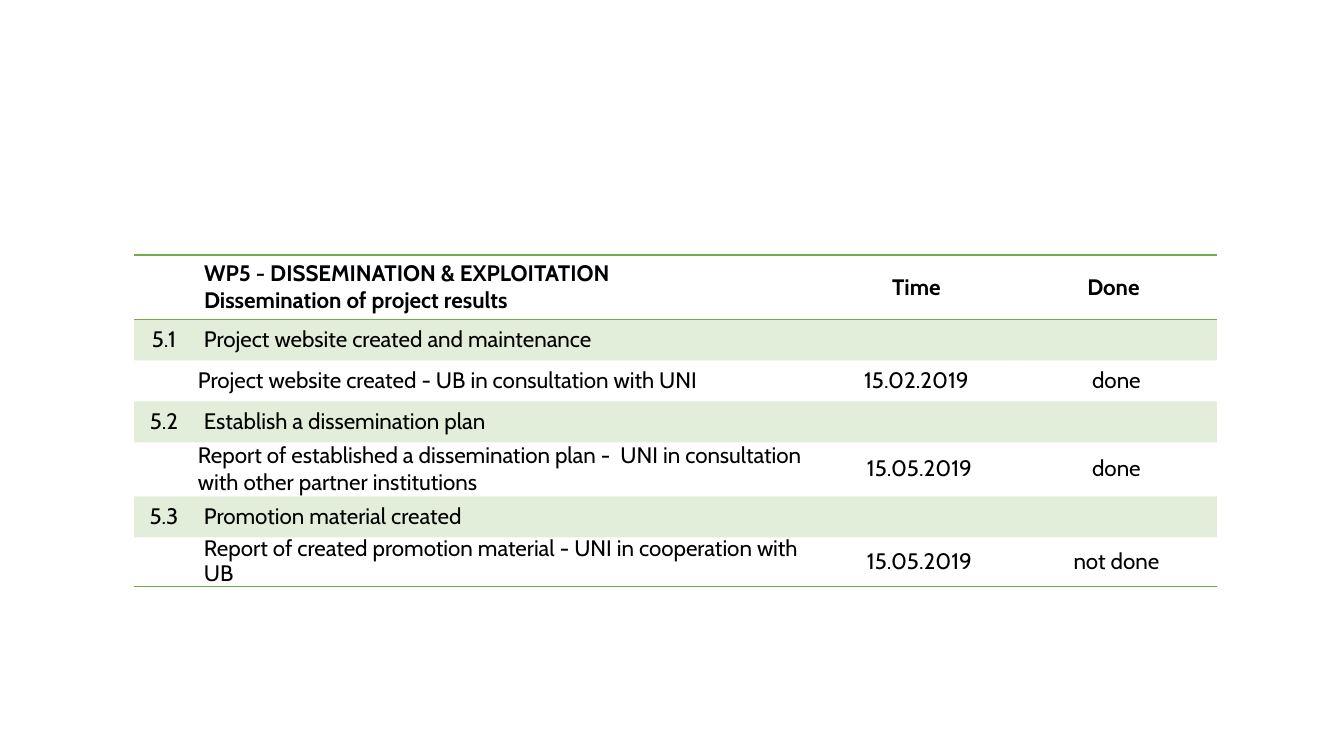
import pptx
import pptx.dml.color
import pptx.enum.text
import pptx.oxml
import pptx.oxml.ns
import pptx.util

PX = 914400 / 100.8
GREEN = "70AD47"
NO_STYLE = "{2D5ABB26-0587-4C30-8999-92F81FD0307C}"
CENTER = pptx.enum.text.PP_ALIGN.CENTER
LEFT = pptx.enum.text.PP_ALIGN.LEFT


def px(length):
    return pptx.util.Emu(round(length * PX))


def add_xml(parent, xml, index):
    """Insert a drawing element at the given place among the children."""
    namespace = pptx.oxml.ns.nsdecls("a")
    parent.insert(index, pptx.oxml.parse_xml(xml.replace(" ", f" {namespace} ", 1)))


deck = pptx.Presentation()
deck.slide_width, deck.slide_height = px(1344), px(756)
page = deck.slides.add_slide(deck.slide_layouts[6])

rows = [
    ["", "WP5 - DISSEMINATION & EXPLOITATION\vDissemination of project results", "Time", "Done"],
    ["5.1", "Project website created and maintenance", "", ""],
    ["", "Project website created - UB in consultation with UNI", "15.02.2019", "done"],
    ["5.2", "Establish a dissemination plan", "", ""],
    ["", "Report of established a dissemination plan -  UNI in consultation "
         "with other partner institutions", "15.05.2019", "done"],
    ["5.3", "Promotion material created", "", ""],
    ["", "Report of created promotion material - UNI in cooperation with UB",
     "15.05.2019", "not done"],
]
column_widths = [60, 629, 187, 207]
row_height = 41
last_row = len(rows) - 1
flush_cells = {(2, 1), (2, 2), (4, 1)}
single_spaced_cells = {(2, 1), (4, 1)}

frame = page.shapes.add_table(len(rows), len(column_widths), px(134), px(255),
                              px(sum(column_widths)), px(row_height * len(rows)))
table = frame.table
table.first_row = table.horz_banding = False
table._tbl.tblPr.find(pptx.oxml.ns.qn("a:tableStyleId")).text = NO_STYLE
for column, width in zip(table.columns, column_widths):
    column.width = px(width)

for row_index, texts in enumerate(rows):
    table.rows[row_index].height = px(row_height)
    is_header = row_index == 0
    is_section = bool(texts[0])
    for column_index, text in enumerate(texts):
        place = row_index, column_index
        cell = table.cell(*place)
        cell.vertical_anchor = pptx.enum.text.MSO_ANCHOR.MIDDLE
        if text and not is_header:
            cell.margin_left = cell.margin_right = px(4)
            cell.margin_top = cell.margin_bottom = 0

        para = cell.text_frame.paragraphs[0]
        para.text = text
        para.alignment = LEFT if column_index == 1 else CENTER
        if not is_header and place not in single_spaced_cells:
            para.line_spacing = 0.9
        if text and not is_header and column_index > 0 and place not in flush_cells:
            para._p.get_or_add_pPr().set("marL", str(px(6)))
        para.font.name = "Cabin"
        para.font.size = pptx.util.Pt(16)
        para.font.bold = is_header
        para.font.color.rgb = pptx.dml.color.RGBColor.from_string("000000")

        if is_section:
            cell.fill.solid()
            cell.fill.fore_color.rgb = pptx.dml.color.RGBColor.from_string(GREEN)
            color = cell._tc.tcPr.find(".//" + pptx.oxml.ns.qn("a:srgbClr"))
            add_xml(color, '<a:alpha val="20000"/>', 0)
        else:
            cell.fill.background()

        edges = ["lnT", "lnB"] if is_header else ["lnB"] if row_index == last_row else []
        for index, edge in enumerate(edges):
            add_xml(cell._tc.tcPr, f'<a:{edge} w="12700"><a:solidFill>'
                    f'<a:srgbClr val="{GREEN}"/></a:solidFill></a:{edge}>', index)

deck.save("out.pptx")
